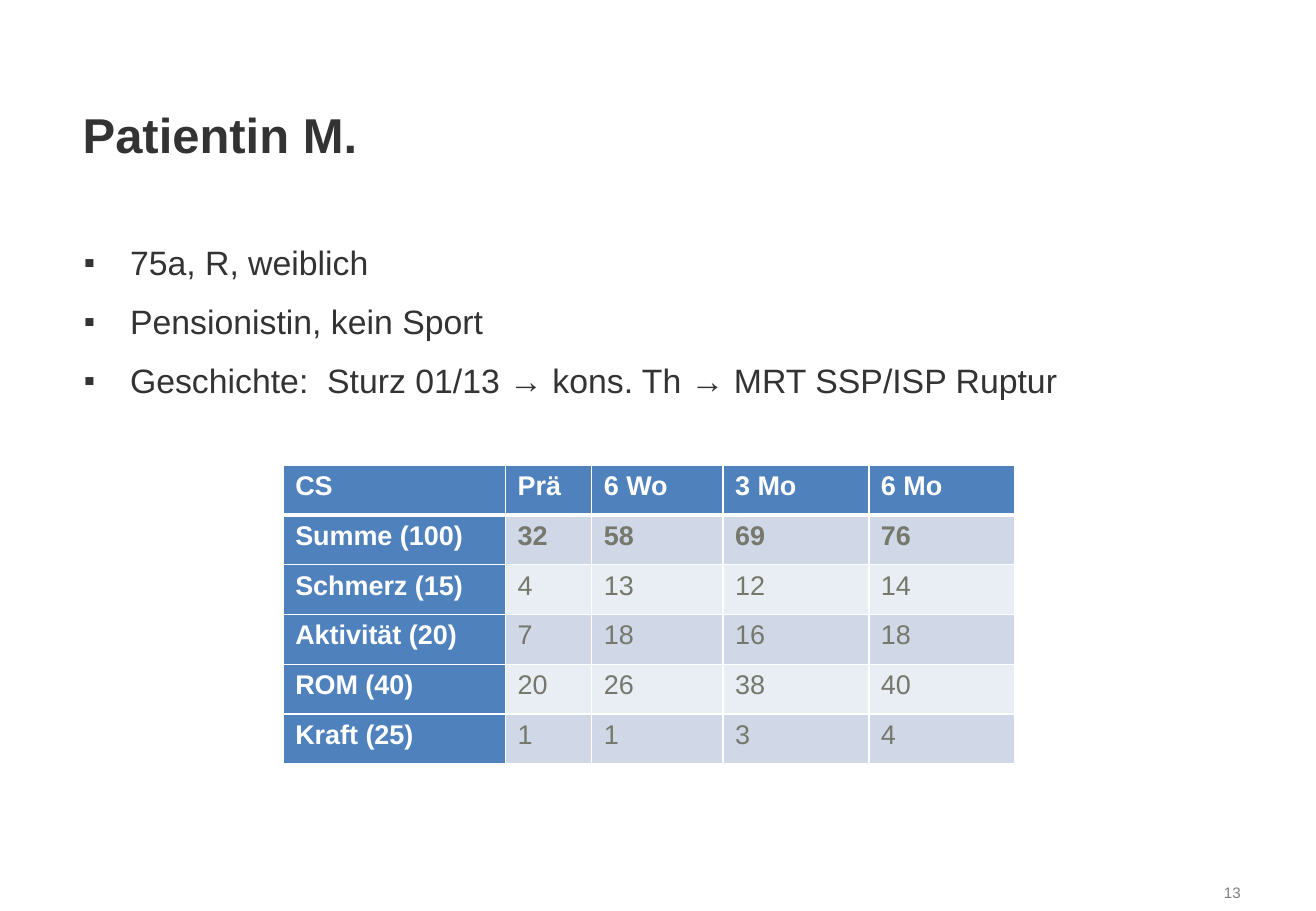
from dataclasses import dataclass

from lxml import etree
from pptx import Presentation
from pptx.dml.color import RGBColor
from pptx.enum import text
from pptx.oxml import ns
from pptx.util import Inches, Pt


@dataclass(frozen=True)
class Theme:
    """Colours, font and type sizes of the slide."""
    font: str = "Arial"
    ink: str = "333333"
    muted: str = "808080"
    value: str = "75786A"
    white: str = "FFFFFF"
    header: str = "4F81BD"
    bands: tuple = ("D0D8E8", "E9EDF4")
    title_size: int = 29
    body_size: int = 20
    table_size: int = 16
    number_size: int = 9


THEME = Theme()
BULLETS = [
    "75a, R, weiblich",
    "Pensionistin, kein Sport",
    "Geschichte:  Sturz 01/13 → kons. Th → MRT SSP/ISP Ruptur",
]
SCORES = [
    ("CS", "Prä", "6 Wo", "3 Mo", "6 Mo"),
    ("Summe (100)", "32", "58", "69", "76"),
    ("Schmerz (15)", "4", "13", "12", "14"),
    ("Aktivität (20)", "7", "18", "16", "18"),
    ("ROM (40)", "20", "26", "38", "40"),
    ("Kraft (25)", "1", "1", "3", "4"),
]
COL_WIDTHS = (1.83, 0.71, 1.08, 1.2, 1.2)
ROW_HEIGHT = 0.41


def place(sp, left, top, width, height):
    """Move and size a shape, in inches."""
    sp.left, sp.top = Inches(left), Inches(top)
    sp.width, sp.height = Inches(width), Inches(height)


def format_runs(tf, size, color, bold=False):
    """Apply the theme font to every run of a text frame."""
    for p in tf.paragraphs:
        for r in p.runs:
            r.font.name = THEME.font
            r.font.size = Pt(size)
            r.font.bold = bold
            r.font.color.rgb = RGBColor.from_string(color)


def add_bullet(p):
    """Give a paragraph a small square bullet with a hanging indent."""
    pPr = p._p.get_or_add_pPr()
    pPr.set("marL", str(Inches(0.38)))
    pPr.set("indent", str(-Inches(0.38)))
    for tag, name, value in (("a:buSzPct", "val", "95000"),
                             ("a:buFont", "typeface", THEME.font),
                             ("a:buChar", "char", "▪")):
        etree.SubElement(pPr, ns.qn(tag)).set(name, value)


def add_title(s, title):
    """Fill the title placeholder."""
    sp = s.shapes.title
    place(sp, 0.58, 0.75, 6.42, 0.71)
    tf = sp.text_frame
    tf.text = title
    tf.auto_size = text.MSO_AUTO_SIZE.NONE
    tf.vertical_anchor = text.MSO_ANCHOR.MIDDLE
    tf.paragraphs[0].alignment = text.PP_ALIGN.LEFT
    format_runs(tf, THEME.title_size, THEME.ink, bold=True)


def add_list(s, items):
    """Fill the body placeholder with bulleted items."""
    sp = s.placeholders[1]
    place(sp, 0.59, 1.94, 9.57, 3.53)
    tf = sp.text_frame
    tf.text = "\n".join(items)
    tf.auto_size = text.MSO_AUTO_SIZE.NONE
    for i, p in enumerate(tf.paragraphs):
        add_bullet(p)
        p.space_before = Pt(11 if i else 0)
    format_runs(tf, THEME.body_size, THEME.ink)


def add_border(cell, side, width):
    """Draw one white side of a table cell."""
    ln = etree.SubElement(cell._tc.get_or_add_tcPr(), ns.qn(f"a:ln{side}"))
    ln.set("w", str(Pt(width)))
    fill = etree.SubElement(ln, ns.qn("a:solidFill"))
    etree.SubElement(fill, ns.qn("a:srgbClr")).set("val", THEME.white)


def format_cell(cell, row, col):
    """Style a cell by its place in the table."""
    heading = row == 0 or col == 0
    widths = {"L": 1, "R": 1, "T": 3 if row == 1 else 1, "B": 3 if row == 0 else 1}
    for side, width in widths.items():
        add_border(cell, side, width)
    fill = THEME.header if heading else THEME.bands[(row - 1) % 2]
    cell.fill.solid()
    cell.fill.fore_color.rgb = RGBColor.from_string(fill)
    color = THEME.white if heading else THEME.value
    format_runs(cell.text_frame, THEME.table_size, color, bold=heading or row == 1)


def add_scores(s, rows):
    """Add the score table."""
    table = s.shapes.add_table(
        len(rows), len(COL_WIDTHS), Inches(2.33), Inches(3.83),
        Inches(sum(COL_WIDTHS)), Inches(ROW_HEIGHT * len(rows))).table
    table.first_col = True
    for column, width in zip(table.columns, COL_WIDTHS):
        column.width = Inches(width)
    for i, values in enumerate(rows):
        table.rows[i].height = Inches(ROW_HEIGHT)
        for j, value in enumerate(values):
            cell = table.cell(i, j)
            cell.text_frame.text = value
            format_cell(cell, i, j)


def add_number(s, number):
    """Add the page number at the lower right."""
    sp = s.shapes.add_textbox(Inches(8.41), Inches(7.22), Inches(1.9), Inches(0.28))
    tf = sp.text_frame
    tf.word_wrap = True
    tf.text = number
    tf.paragraphs[0].alignment = text.PP_ALIGN.RIGHT
    format_runs(tf, THEME.number_size, THEME.muted)


def main():
    """Build and save the slide."""
    prs = Presentation()
    prs.slide_width, prs.slide_height = Inches(10.83), Inches(7.5)
    s = prs.slides.add_slide(prs.slide_layouts[1])
    add_title(s, "Patientin M.")
    add_list(s, BULLETS)
    add_number(s, "13")
    add_scores(s, SCORES)
    prs.save("out.pptx")


if __name__ == "__main__":
    main()
